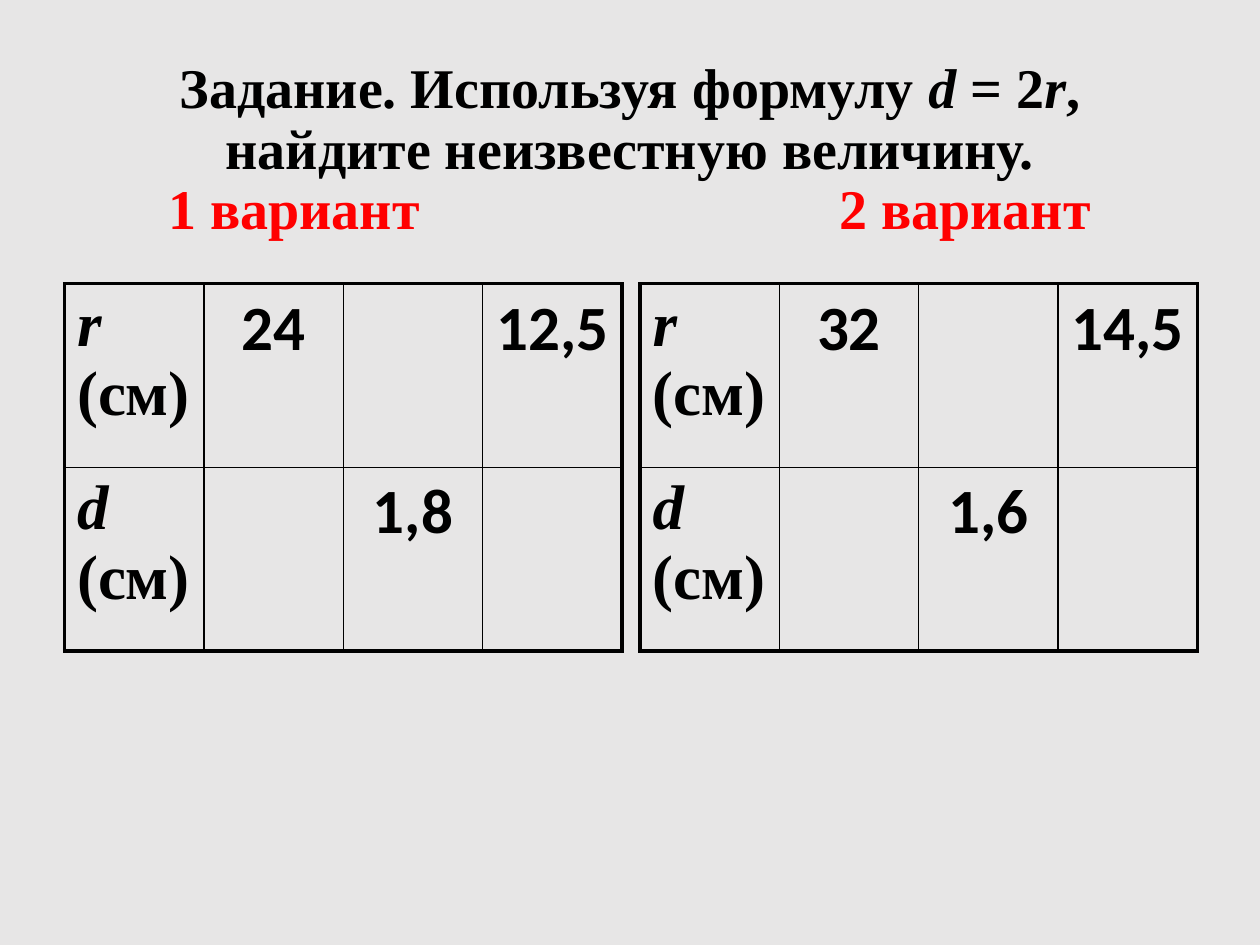
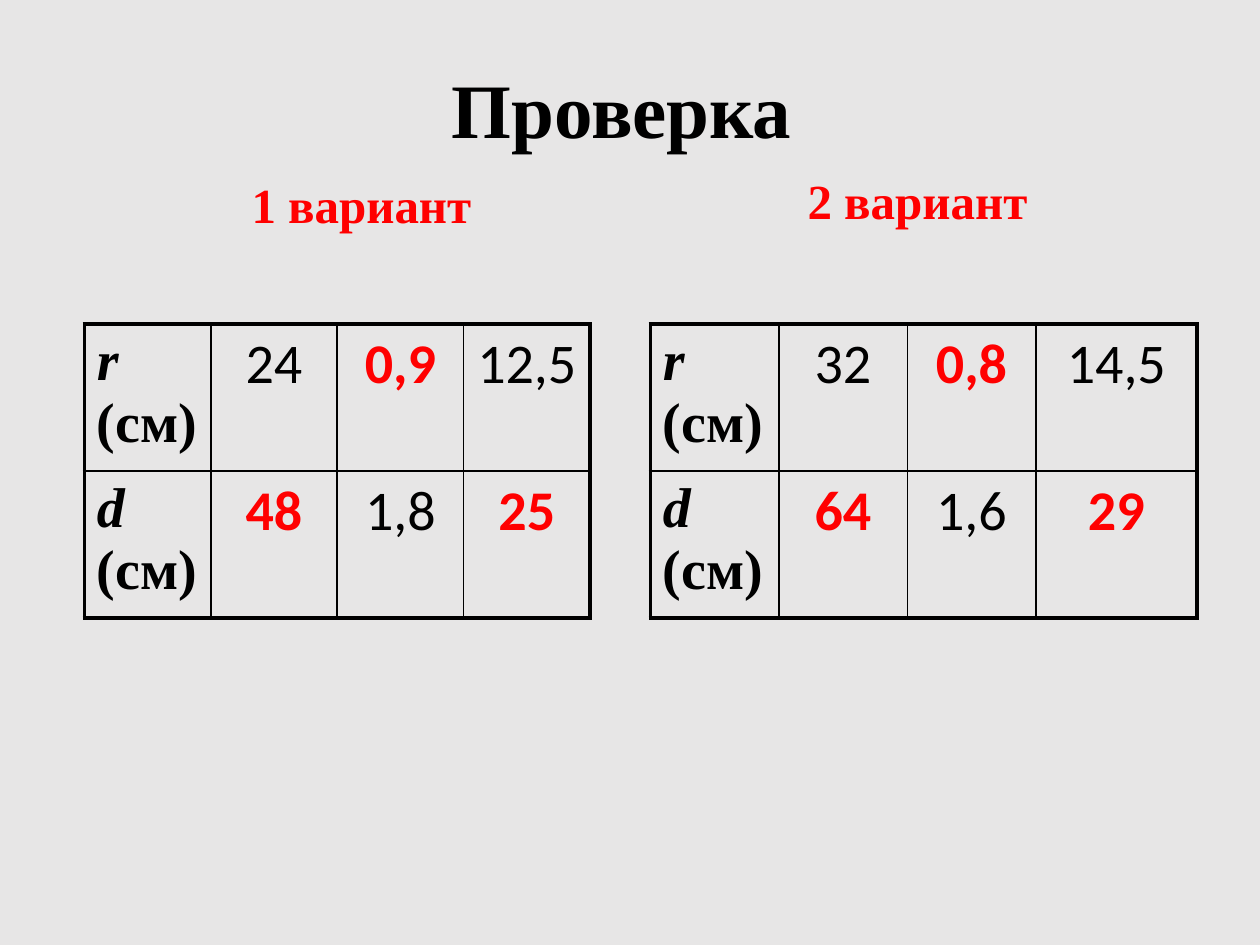
"""Builds the exercise on d = 2r and its answer slide."""
import lxml.etree
import pptx
import pptx.dml.color
import pptx.enum.text
import pptx.oxml.ns
import pptx.util

Cm, Pt = pptx.util.Cm, pptx.util.Pt
ALIGN = pptx.enum.text.PP_ALIGN
ANCHOR = pptx.enum.text.MSO_ANCHOR
qn = pptx.oxml.ns.qn
COLORS = {"background": "E7E6E6", "text": "000000", "accent": "FF0000"}
SERIF, SANS = "Times New Roman", "Calibri"
THICK, THIN = Pt(2.25), Pt(1)
VARIANTS = [
    [("24", "0,9", "12,5"), ("48", "1,8", "25")],
    [("32", "0,8", "14,5"), ("64", "1,6", "29")],
]
UNKNOWN = {(0, 2), (1, 1), (1, 3)}


def write(paragraph, pieces, size, font=SERIF, color="text", bold=True, align=ALIGN.CENTER):
    """Fill a paragraph with (text, italic) pieces."""
    paragraph.alignment = align
    for text, italic in pieces:
        run = paragraph.add_run()
        run.text = text
        run.font.size, run.font.name = Pt(size), font
        run.font.bold, run.font.italic = bold, italic
        run.font.color.rgb = pptx.dml.color.RGBColor.from_string(COLORS[color])


def add_frame(slide, left, top, width, height, anchor):
    """Add a wrapping text box with tight lines and return its frame."""
    frame = slide.shapes.add_textbox(Cm(left), Cm(top), Cm(width), Cm(height)).text_frame
    frame.word_wrap = True
    frame.vertical_anchor = anchor
    frame.paragraphs[0].line_spacing = 0.9
    return frame


prs = pptx.Presentation()
prs.slide_width, prs.slide_height = Cm(25.4), Cm(19.05)
backdrop = prs.slide_master.background.fill
backdrop.solid()
backdrop.fore_color.rgb = pptx.dml.color.RGBColor.from_string(COLORS["background"])
blank = prs.slide_layouts[6]

task = prs.slides.add_slide(blank)
task_title = add_frame(task, 1.27, 0.76, 22.86, 4.57, ANCHOR.MIDDLE)
write(task_title.paragraphs[0], [
    ("Задание. Используя формулу ", False), ("d", True), (" = 2", False),
    ("r", True), (", найдите неизвестную величину.", False)], 32)
variant_line = task_title.add_paragraph()
variant_line.line_spacing = 0.9
write(variant_line, [("\t1 вариант\t2 вариант", False)], 32, color="accent", align=ALIGN.LEFT)
tab_stops = lxml.etree.SubElement(variant_line._p.get_or_add_pPr(), qn("a:tabLst"))
for stop in (1.87, 15.4):
    lxml.etree.SubElement(tab_stops, qn("a:tab"), pos=str(Cm(stop)), algn="l")

check = prs.slides.add_slide(blank)
check_title = add_frame(check, 1.3, 0.71, 22.86, 3.18, ANCHOR.MIDDLE)
write(check_title.paragraphs[0], [("Проверка ", False)], 44)
for heading, left, top, height, inset in [
    ("1 вариант", 1.3, 3.53, 13.56, 0.99),
    ("2 вариант", 12.88, 3.45, 13.28, 0.25),
]:
    frame = add_frame(check, left, top, 11.23, height, ANCHOR.TOP)
    frame.margin_left = Cm(inset)
    write(frame.paragraphs[0], [(heading, False)], 28, color="accent")

for slide, variant, left, top, columns, row_height, size in [
    (task, 0, 1.3, 5.72, [2.81] * 4, 3.7, 36),
    (task, 1, 12.9, 5.72, [2.81] * 4, 3.7, 36),
    (check, 0, 1.7, 6.53, [2.55] * 4, 2.79, 32),
    (check, 1, 13.11, 6.53, [2.59] * 3 + [3.25], 2.9, 32),
]:
    table = slide.shapes.add_table(
        2, 4, Cm(left), Cm(top), Cm(sum(columns)), Cm(2 * row_height)).table
    table.first_row = table.horz_banding = False
    for column, width in zip(table.columns, columns):
        column.width = Cm(width)
    for r, (symbol, values) in enumerate(zip("rd", VARIANTS[variant])):
        table.rows[r].height = Cm(row_height)
        for c in range(4):
            cell = table.cell(r, c)
            cell.fill.background()
            paragraph = cell.text_frame.paragraphs[0]
            answer = (r, c) in UNKNOWN
            if c == 0:
                write(paragraph, [(symbol, True), (" (см)", False)], size, align=ALIGN.LEFT)
            elif slide is check or not answer:
                write(paragraph, [(values[c - 1], False)], size, SANS,
                      "accent" if answer else "text", answer or slide is task)
            edges = {"L": c == 0, "R": c == 3, "T": r == 0, "B": r == 1}
            for position, (side, outer) in enumerate(edges.items()):
                border = lxml.etree.Element(qn(f"a:ln{side}"), w=str(THICK if outer else THIN))
                ink = lxml.etree.SubElement(border, qn("a:solidFill"))
                lxml.etree.SubElement(ink, qn("a:srgbClr"), val=COLORS["text"])
                cell._tc.get_or_add_tcPr().insert(position, border)

prs.save("out.pptx")
